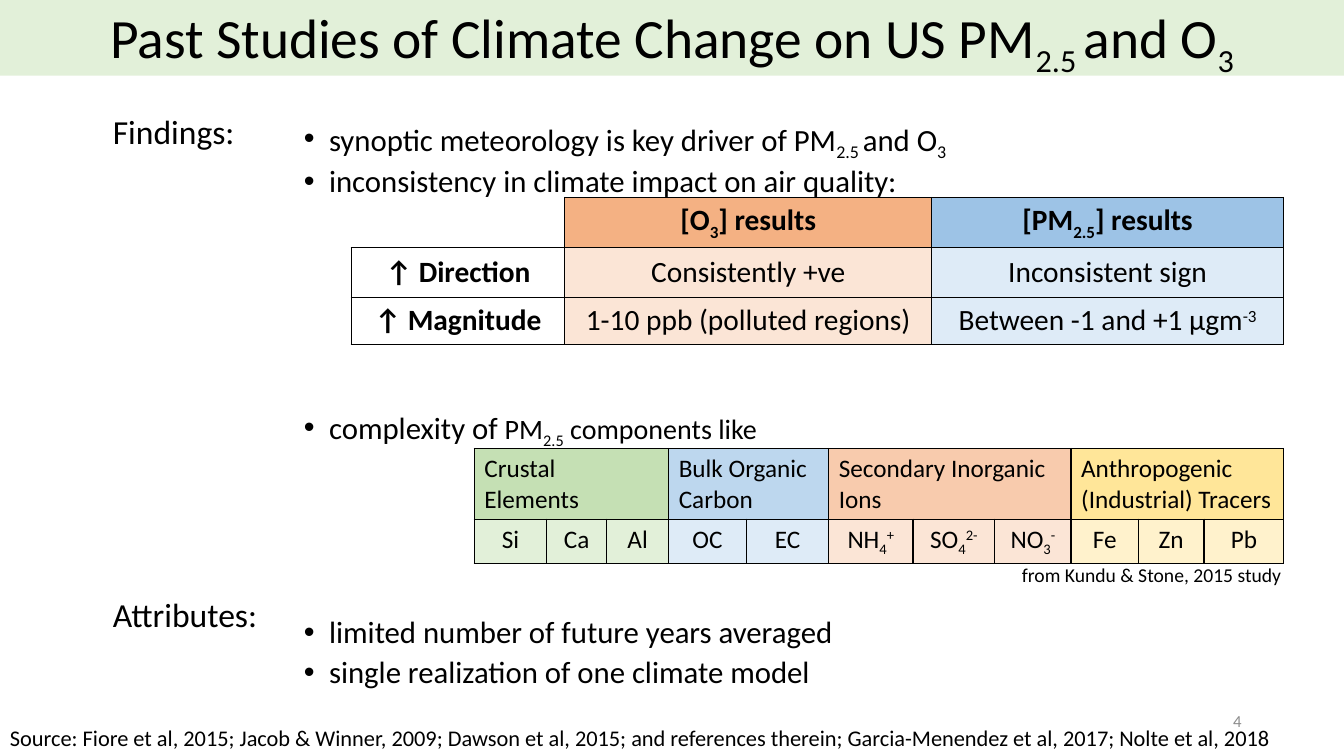
import pptx
import pptx.util
import pptx.dml.color
import pptx.enum.shapes
import pptx.enum.text
import pptx.oxml.ns
import lxml.etree

Pt = pptx.util.Pt
ALIGN = pptx.enum.text.PP_ALIGN
ANCHOR = pptx.enum.text.MSO_ANCHOR

COLORS = {
    "black": "000000", "grey": "8C8C8C", "banner": "E2F0D9",
    "orange": "F4B183", "light orange": "FBE5D6", "blue": "9DC3E6",
    "light blue": "DEEBF7", "green": "C5E0B4", "light green": "E2F0D9",
    "mid blue": "BDD7EE", "peach": "F8CBAD", "yellow": "FFE699",
    "light yellow": "FFF2CC",
}
BASELINES = {"_": "-25000", "^": "30000"}

TITLE = "Past Studies of Climate Change on US PM|_2.5 |and O|_3"
BULLETS = [
    ("synoptic meteorology is key driver of PM|_2.5 |and O|_3", 0, 22),
    ("inconsistency in climate impact on air quality:", 5, 22),
    ("complexity of |PM|_2.5| components like", 151, 20),
    ("limited number of future years averaged", 121, 22),
    ("single realization of one climate model", 5, 22),
]
LABELS = [
    ("Findings:", (73.5, 75.6, 128, 36), {"size": 24}),
    ("Attributes:", (73.5, 420.5, 128, 36), {"size": 24}),
    ("Source: Fiore et al, 2015; Jacob & Winner, 2009; Dawson et al, 2015; "
     "and references therein; Garcia-Menendez et al, 2017; Nolte et al, 2018",
     (0, 513.4, 960, 26.6), {"size": 16}),
    ("from Kundu & Stone, 2015 study", (722.9, 398.9, 204.5, 24.5),
     {"size": 14, "wrap": False}),
    ("4", (678, 500.5, 216, 28.8),
     {"size": 12, "color": "grey", "align": ALIGN.RIGHT, "anchor": ANCHOR.MIDDLE}),
]
RESULTS = [
    ["", "[O|_3|] results", "[PM|_2.5|] results"],
    ["↑ Direction", "Consistently +ve", "Inconsistent sign"],
    ["↑ Magnitude", "1-10 ppb (polluted regions)", "Between -1 and +1 µgm|^-3"],
]
RESULT_FILLS = [(None, "orange", "blue"), (None, "light orange", "light blue")]
RESULT_COLUMNS = [152.6, 262, 251.4]
RESULT_ROWS = [36, 35.3, 33.8]
COMPONENTS = [
    (["Crustal", "Elements"], "green", "light green", ["Si", "Ca", "Al"]),
    (["Bulk Organic", "Carbon"], "mid blue", "light blue", ["OC", "EC"]),
    (["Secondary Inorganic Ions"], "peach", "light orange",
     ["NH|_4|^+", "SO|_4|^2-", "NO|_3|^-"]),
    (["Anthropogenic (Industrial) Tracers"], "yellow", "light yellow",
     ["Fe", "Zn", "Pb"]),
]
COMPONENT_COLUMNS = [51.8, 42.7, 44.4, 55.4, 58.9, 60.2, 58.5, 54.5, 48, 47, 57]
COMPONENT_ROWS = [50.4, 31]


def rgb(name):
    return pptx.dml.color.RGBColor.from_string(COLORS[name])


def write(paragraph, text, size=18, rest_size=None, color="black", bold=False,
          align=ALIGN.LEFT, spacing=None, before=None):
    paragraph.alignment = align
    if spacing:
        paragraph.line_spacing = spacing
    if before:
        paragraph.space_before = Pt(before)
    for index, piece in enumerate(text.split("|")):
        baseline = BASELINES.get(piece[:1])
        run = paragraph.add_run()
        run.text = piece[1:] if baseline else piece
        run.font.name = "Calibri"
        run.font.size = Pt(rest_size if index and rest_size else size)
        run.font.bold = bold
        run.font.color.rgb = rgb(color)
        if baseline:
            run.font._element.set("baseline", baseline)


def add_box(slide, place, wrap=True, anchor=ANCHOR.TOP):
    frame = slide.shapes.add_textbox(*map(Pt, place)).text_frame
    frame.word_wrap = wrap
    frame.vertical_anchor = anchor
    return frame


def add_bullet(paragraph):
    properties = paragraph._p.get_or_add_pPr()
    properties.set("marL", str(Pt(162)))
    properties.set("indent", str(-Pt(18)))
    font = lxml.etree.SubElement(properties, pptx.oxml.ns.qn("a:buFont"))
    font.set("typeface", "Arial")
    bullet = lxml.etree.SubElement(properties, pptx.oxml.ns.qn("a:buChar"))
    bullet.set("char", "•")


def add_grid(slide, left, top, columns, rows):
    frame = slide.shapes.add_table(len(rows), len(columns), Pt(left), Pt(top),
                                   Pt(sum(columns)), Pt(sum(rows)))
    table = frame.table
    table.first_row = table.horz_banding = False
    for column, width in zip(table.columns, columns):
        column.width = Pt(width)
    for row, height in zip(table.rows, rows):
        row.height = Pt(height)
    return table


def style_cell(cell, fill=None, sides="LRTB"):
    if fill:
        cell.fill.solid()
        cell.fill.fore_color.rgb = rgb(fill)
    else:
        cell.fill.background()
    properties = cell._tc.get_or_add_tcPr()
    for index, side in enumerate("LRTB"):
        line = lxml.etree.Element(pptx.oxml.ns.qn("a:ln" + side), w=str(Pt(1)))
        if side in sides:
            solid = lxml.etree.SubElement(line, pptx.oxml.ns.qn("a:solidFill"))
            lxml.etree.SubElement(solid, pptx.oxml.ns.qn("a:srgbClr"), val=COLORS["black"])
        else:
            lxml.etree.SubElement(line, pptx.oxml.ns.qn("a:noFill"))
        properties.insert(index, line)


def add_title(slide):
    title = slide.shapes.title
    title.left, title.top, title.width, title.height = map(Pt, (0, 0, 960, 54))
    title.fill.solid()
    title.fill.fore_color.rgb = rgb("banner")
    title.text_frame.auto_size = pptx.enum.text.MSO_AUTO_SIZE.NONE
    title.text_frame.vertical_anchor = ANCHOR.MIDDLE
    write(title.text_frame.paragraphs[0], TITLE, size=39.6, align=ALIGN.CENTER, spacing=0.9)


def add_bullets(slide):
    frame = add_box(slide, (66, 82.8, 828, 417.6))
    for index, (text, before, rest_size) in enumerate(BULLETS):
        paragraph = frame.add_paragraph() if index else frame.paragraphs[0]
        add_bullet(paragraph)
        write(paragraph, text, size=22, rest_size=rest_size, spacing=0.9, before=before)


def add_results(slide):
    table = add_grid(slide, 250.9, 141, RESULT_COLUMNS, RESULT_ROWS)
    for row, texts in enumerate(RESULTS):
        for column, text in enumerate(texts):
            cell = table.cell(row, column)
            style_cell(cell, RESULT_FILLS[min(row, 1)][column], "LRTB" if text else "RB")
            cell.vertical_anchor = ANCHOR.MIDDLE
            if text:
                write(cell.text_frame.paragraphs[0], text, size=21,
                      bold=row == 0 or column == 0, align=ALIGN.CENTER)


def add_components(slide):
    table = add_grid(slide, 338.8, 320.4, COMPONENT_COLUMNS, COMPONENT_ROWS)
    start = 0
    for heading, fill, light_fill, names in COMPONENTS:
        for column, name in enumerate(names, start):
            style_cell(table.cell(0, column), fill)
            style_cell(table.cell(1, column), light_fill)
            write(table.cell(1, column).text_frame.paragraphs[0], name, align=ALIGN.CENTER)
        head = table.cell(0, start)
        head.merge(table.cell(0, start + len(names) - 1))
        for index, text in enumerate(heading):
            frame = head.text_frame
            write(frame.add_paragraph() if index else frame.paragraphs[0], text)
        start += len(names)


def main():
    presentation = pptx.Presentation()
    presentation.slide_width, presentation.slide_height = Pt(960), Pt(540)
    slide = presentation.slides.add_slide(presentation.slide_layouts[5])
    add_title(slide)
    add_bullets(slide)
    add_results(slide)
    add_components(slide)
    for text, place, style in LABELS:
        style = dict(style)
        frame = add_box(slide, place, style.pop("wrap", True), style.pop("anchor", ANCHOR.TOP))
        write(frame.paragraphs[0], text, **style)
    presentation.save("out.pptx")


if __name__ == "__main__":
    main()
